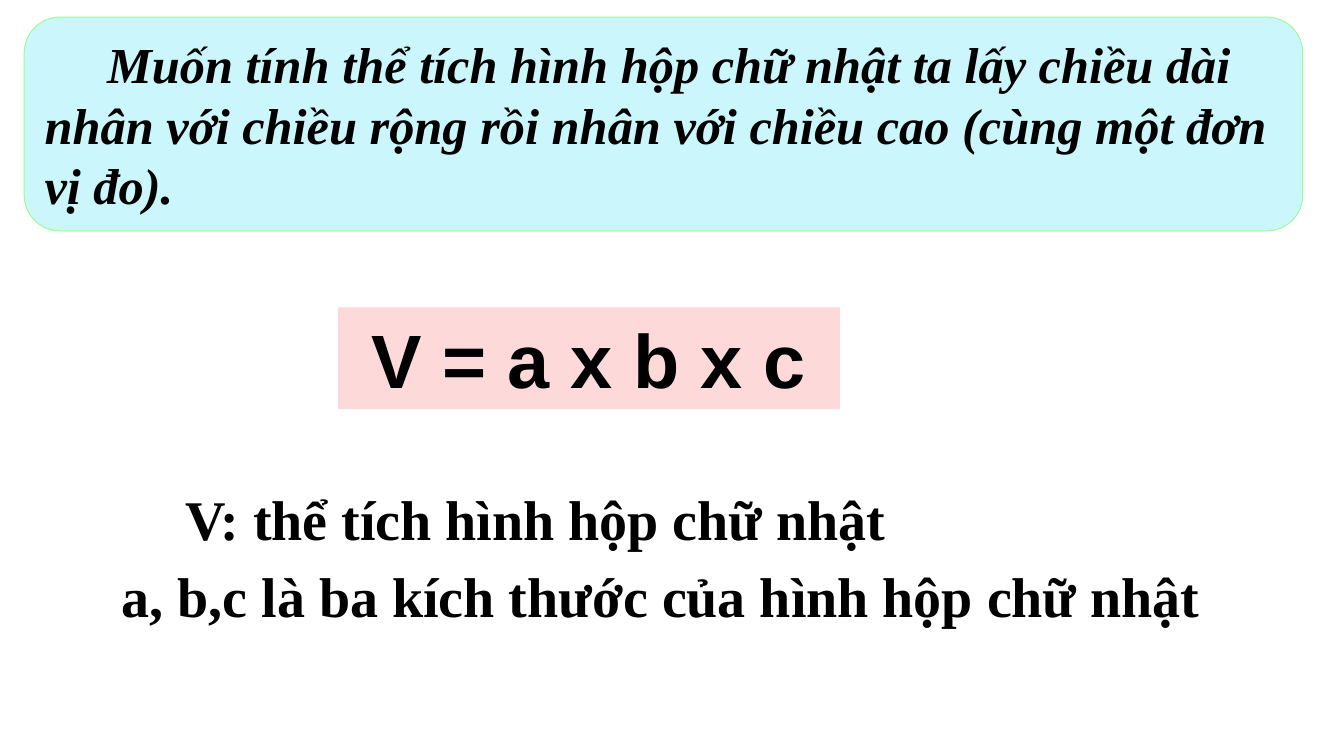
"""Builds the slide on the volume of a rectangular box."""
from pptx import Presentation, util as u
from pptx.dml.color import RGBColor
from pptx.enum import shapes, text

RULE = ("Muốn tính thể tích hình hộp chữ nhật ta lấy chiều dài nhân với "
        "chiều rộng rồi nhân với chiều cao (cùng một đơn vị đo).")
FORMULA = "V = a x b x c"
LEGEND = [
    ("V: thể tích hình hộp chữ nhật", (1.74, 4.76, 7.86, 0.77)),
    ("a, b,c là ba kích thước của hình hộp chữ nhật", (1.11, 5.52, 11.2, 0.77)),
]
THEME = {
    "ink": "000000", "rule_fill": "CBF7FC", "rule_line": "99FF99",
    "formula_fill": "FED9D9", "serif": "Times New Roman", "sans": "Arial",
    "rule_size": 36, "formula_size": 54, "legend_size": 40,
}


def rgb(name):
    return RGBColor.from_string(THEME[name])


def write(sp, words, font, size, align=text.PP_ALIGN.LEFT,
          anchor=text.MSO_ANCHOR.TOP, italic=False):
    tf = sp.text_frame
    tf.word_wrap = True
    tf.vertical_anchor = anchor
    p = tf.paragraphs[0]
    p.text = words
    p.alignment = align
    f = p.runs[0].font
    f.name, f.size, f.bold, f.italic = THEME[font], u.Pt(THEME[size]), True, italic
    f.color.rgb = rgb("ink")
    return p


def add_panel(s, kind, box, fill, line=None):
    sp = s.shapes.add_shape(kind, *map(u.Inches, box))
    sp.shadow.inherit = False
    sp.fill.solid()
    sp.fill.fore_color.rgb = rgb(fill)
    if line:
        sp.line.color.rgb = rgb(line)
        sp.line.width = u.Pt(0.75)
    else:
        sp.line.fill.background()
    return sp


def main():
    prs = Presentation()
    prs.slide_width, prs.slide_height = u.Inches(13.33), u.Inches(7.5)
    s = prs.slides.add_slide(prs.slide_layouts[6])

    sp = add_panel(s, shapes.MSO_SHAPE.ROUNDED_RECTANGLE,
                   (0.24, 0.17, 12.68, 2.12), "rule_fill", "rule_line")
    p = write(sp, RULE, "serif", "rule_size",
              anchor=text.MSO_ANCHOR.MIDDLE, italic=True)
    p._p.get_or_add_pPr().set("indent", str(u.Inches(0.62)))

    sp = add_panel(s, shapes.MSO_SHAPE.RECTANGLE,
                   (3.35, 3.05, 4.98, 1.01), "formula_fill")
    write(sp, FORMULA, "sans", "formula_size",
          text.PP_ALIGN.CENTER, text.MSO_ANCHOR.MIDDLE)

    for words, box in LEGEND:
        sp = s.shapes.add_textbox(*map(u.Inches, box))
        write(sp, words, "serif", "legend_size")

    prs.save("out.pptx")


if __name__ == "__main__":
    main()
